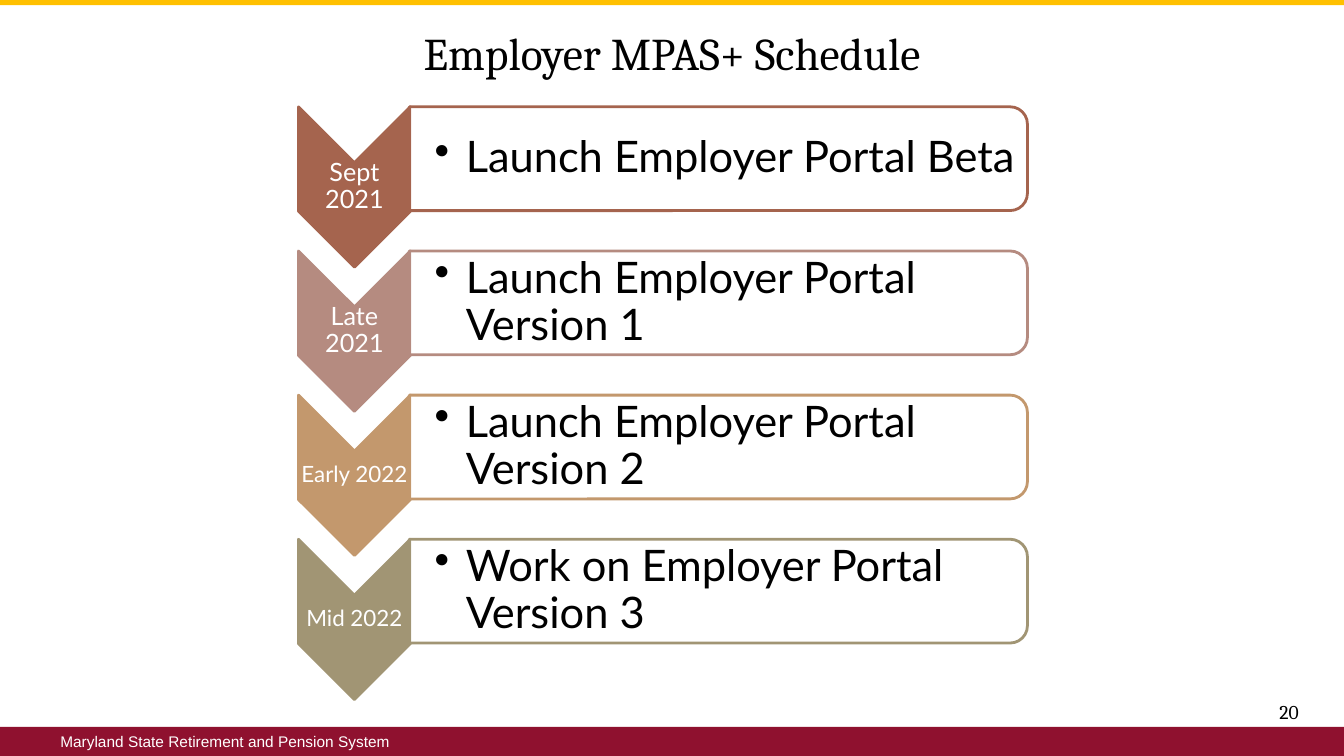
from dataclasses import dataclass

import pptx
import pptx.dml.color
import pptx.enum.shapes
import pptx.enum.text
import pptx.oxml.ns
import pptx.util
from lxml import etree

Inches = pptx.util.Inches
Pt = pptx.util.Pt
Rgb = pptx.dml.color.RGBColor
Kind = pptx.enum.shapes.MSO_SHAPE
Align = pptx.enum.text.PP_ALIGN
qn = pptx.oxml.ns.qn


@dataclass(frozen=True)
class Theme:
    white: str = "FFFFFF"
    black: str = "000000"
    maroon: str = "8F112F"
    gold: str = "FFC000"
    serif: str = "Cambria"
    sans: str = "Lato"
    foot: str = "Arial"
    title: float = 32.4
    body: float = 31
    number: float = 14
    small: float = 11
    edge: float = 2


@dataclass(frozen=True)
class Box:
    left: float
    top: float
    width: float
    height: float


@dataclass(frozen=True)
class Step:
    date: str
    size: float
    task: str
    color: str


THEME = Theme()
STEPS = [
    Step("Sept 2021", 18, "Launch Employer Portal Beta", "A5644E"),
    Step("Late 2021", 18, "Launch Employer Portal Version 1", "B58B80"),
    Step("Early 2022", 16, "Launch Employer Portal Version 2", "C3986D"),
    Step("Mid 2022", 16, "Work on Employer Portal Version 3", "A19574"),
]
PITCH = 1.43


def place(shape, box: Box) -> None:
    shape.left, shape.top = Inches(box.left), Inches(box.top)
    shape.width, shape.height = Inches(box.width), Inches(box.height)


def draw(slide, kind, box: Box, fill: str, line: str = "", turn: float = 0):
    shape = slide.shapes.add_shape(kind, 0, 0, 0, 0)
    place(shape, box)
    shape.rotation = turn
    shape.shadow.inherit = False
    shape.fill.solid()
    shape.fill.fore_color.rgb = Rgb.from_string(fill)
    if line:
        shape.line.color.rgb = Rgb.from_string(line)
        shape.line.width = Pt(THEME.edge)
    else:
        shape.line.fill.background()
    return shape


def write(shape, text: str, font: str, size: float, color: str, align=Align.CENTER):
    frame = shape.text_frame
    frame.word_wrap = True
    frame.auto_size = pptx.enum.text.MSO_AUTO_SIZE.NONE
    frame.vertical_anchor = pptx.enum.text.MSO_ANCHOR.MIDDLE
    frame.text = text
    para = frame.paragraphs[0]
    para.alignment = align
    for run in para.runs:
        run.font.name = font
        run.font.size = Pt(size)
        run.font.color.rgb = Rgb.from_string(color)
    return para


def label(slide, box: Box, text: str, font: str, size: float, color: str,
          align=Align.CENTER, pad: float = 0.02, indent: float = 0.02):
    shape = slide.shapes.add_textbox(0, 0, 0, 0)
    place(shape, box)
    frame = shape.text_frame
    frame.margin_top = frame.margin_bottom = frame.margin_right = Inches(pad)
    frame.margin_left = Inches(indent)
    return write(shape, text, font, size, color, align)


def bullet(para) -> None:
    props = para._p.get_or_add_pPr()
    props.set("marL", str(Inches(0.31)))
    props.set("indent", str(-Inches(0.31)))
    etree.SubElement(props, qn("a:buChar")).set("char", "•")


def fade(shape, percent: int) -> None:
    color = shape.fill._xPr.find(qn("a:solidFill"))[0]
    etree.SubElement(color, qn("a:alpha")).set("val", str(percent * 1000))


def add_step(slide, step: Step, shift: float) -> None:
    # Date arrow
    draw(slide, Kind.CHEVRON, Box(2.72, 1.3 + shift, 1.59, 1.11),
         step.color, step.color, 90)
    date = label(slide, Box(2.96, 1.61 + shift, 1.11, 0.48), step.date,
                 THEME.sans, step.size, THEME.white, pad=0.01, indent=0.01)
    date.line_spacing = 0.9

    # Task panel
    panel = draw(slide, Kind.ROUND_2_SAME_RECTANGLE,
                 Box(6.61, shift - 1.49, 1.03, 6.13), THEME.white, step.color, 90)
    fade(panel, 90)
    task = label(slide, Box(4.07, 1.11 + shift, 6.08, 0.93), step.task,
                 THEME.sans, THEME.body, THEME.black, Align.LEFT, indent=0.24)
    task.line_spacing = 0.9
    bullet(task)


def main() -> None:
    deck = pptx.Presentation()
    deck.slide_width, deck.slide_height = Inches(13.33), Inches(7.5)
    slide = deck.slides.add_slide(deck.slide_layouts[5])

    # Bands
    foot = draw(slide, Kind.RECTANGLE, Box(0, 7.21, 13.33, 0.29), THEME.maroon)
    write(foot, "\tMaryland State Retirement and Pension System",
          THEME.foot, THEME.small, THEME.white, Align.LEFT)
    draw(slide, Kind.RECTANGLE, Box(0, 0, 13.33, 0.05), THEME.gold)

    # Title and page number
    place(slide.shapes.title, Box(0, 0.06, 13.33, 0.92))
    write(slide.shapes.title, "Employer MPAS+ Schedule",
          THEME.serif, THEME.title, THEME.black)
    label(slide, Box(12.23, 6.93, 1.11, 0.27), "20",
          THEME.serif, THEME.number, THEME.black)

    # Schedule
    for row, step in enumerate(STEPS):
        add_step(slide, step, row * PITCH)

    deck.save("out.pptx")


if __name__ == "__main__":
    main()
